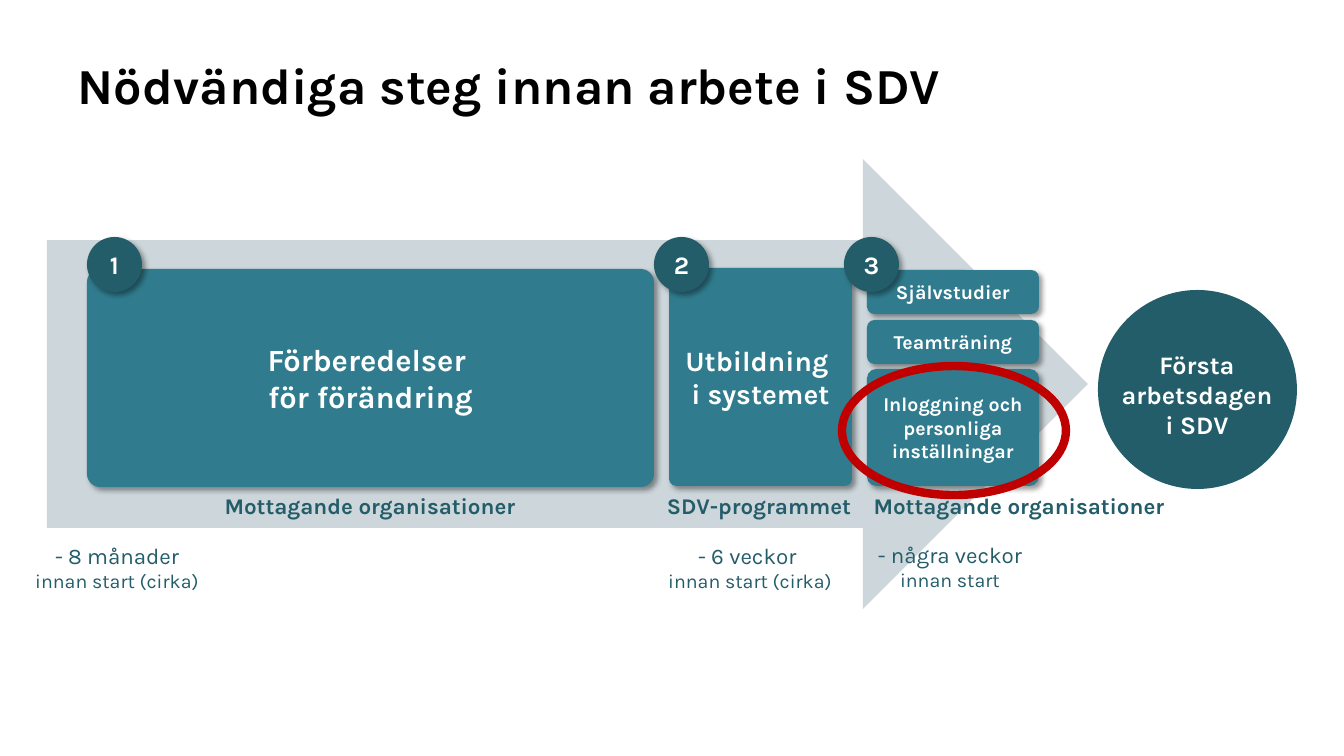
from dataclasses import dataclass

from lxml.etree import SubElement
from pptx import Presentation
from pptx.dml.color import RGBColor
from pptx.enum.shapes import MSO_SHAPE
from pptx.enum.text import MSO_ANCHOR, PP_ALIGN
from pptx.oxml.ns import qn
from pptx.util import Pt

EMU_PER_PX = 914400 / 100.8


def px(n):
    return round(n * EMU_PER_PX)


@dataclass(frozen=True)
class Theme:
    font: str = "Karla"
    black: str = "000000"
    white: str = "FFFFFF"
    dark: str = "245D6A"
    teal: str = "307C8E"
    pale: str = "CDD7DB"
    red: str = "C00000"
    title: int = 36
    phase: int = 22
    step: int = 20
    badge: int = 18
    label: int = 16
    small: int = 14


class Deck:
    def __init__(self, prs, theme):
        self.theme = theme
        self.slide = prs.slides.add_slide(prs.slide_layouts[6])

    def fill_text(self, sp, lines, color, bold=True, align=PP_ALIGN.CENTER,
                  anchor=MSO_ANCHOR.MIDDLE, spacing=None):
        tf = sp.text_frame
        for name, value in {"word_wrap": True, "vertical_anchor": anchor}.items():
            setattr(tf, name, value)
        for i, (text, size) in enumerate(lines):
            p = tf.add_paragraph() if i else tf.paragraphs[0]
            for name, value in {"alignment": align, "line_spacing": spacing}.items():
                setattr(p, name, value)
            r = p.add_run()
            r.text = text
            font = {"name": self.theme.font, "size": Pt(size), "bold": bold}
            for name, value in font.items():
                setattr(r.font, name, value)
            r.font.color.rgb = RGBColor.from_string(color)

    def text(self, box, lines, color, anchor=MSO_ANCHOR.TOP, **fmt):
        sp = self.slide.shapes.add_textbox(*map(px, box))
        self.fill_text(sp, lines, color, anchor=anchor, **fmt)

    def shape(self, kind, box, fill, adjust=()):
        sp = self.slide.shapes.add_shape(kind, *map(px, box))
        sp.shadow.inherit = False
        sp.fill.solid()
        sp.fill.fore_color.rgb = RGBColor.from_string(fill)
        sp.line.fill.background()
        for i, value in enumerate(adjust):
            sp.adjustments[i] = value
        return sp

    def raised(self, kind, box, fill, lines, adjust=()):
        sp = self.shape(kind, box, fill, adjust)
        effects = sp._element.spPr.find(qn("a:effectLst"))
        shadow = SubElement(effects, qn("a:outerShdw"), blurRad=str(Pt(4)),
                            dist=str(Pt(3)), dir="2700000", algn="tl", rotWithShape="0")
        color = SubElement(shadow, qn("a:srgbClr"), val=self.theme.black)
        SubElement(color, qn("a:alpha"), val="40000")
        self.fill_text(sp, lines, self.theme.white)

    def ring(self, box, color, width):
        sp = self.shape(MSO_SHAPE.OVAL, box, color)
        sp.fill.background()
        sp.line.color.rgb = RGBColor.from_string(color)
        sp.line.width = Pt(width)


def main():
    prs = Presentation()
    prs.slide_width, prs.slide_height = px(1344), px(756)
    t = Theme()
    s = Deck(prs, t)

    s.text((68, 39, 1210, 81), [("Nödvändiga steg innan arbete i SDV", t.title)], t.black,
           align=PP_ALIGN.LEFT, anchor=MSO_ANCHOR.BOTTOM, spacing=1.1)
    s.shape(MSO_SHAPE.RIGHT_ARROW, (47, 159, 1041, 450), t.pale, (0.64, 0.5))
    s.shape(MSO_SHAPE.OVAL, (1098, 290, 199, 199), t.dark)
    s.text((1105, 344, 184, 102), [("Första arbetsdagen i SDV", t.badge)], t.white)

    cards = [
        ((867, 270, 172, 44), 0.17, t.small, ["Självstudier"]),
        ((867, 320, 172, 44), 0.17, t.small, ["Teamträning"]),
        ((867, 369, 172, 117), 0.08, t.small, ["Inloggning och personliga inställningar"]),
        ((669, 268, 183, 218), 0.04, t.step, ["Utbildning ", "i systemet"]),
        ((87, 269, 567, 218), 0.06, t.phase, ["Förberedelser ", "för förändring"]),
    ]
    for box, radius, size, lines in cards:
        s.raised(MSO_SHAPE.ROUNDED_RECTANGLE, box, t.teal,
                 [(line, size) for line in lines], (radius,))

    for number, x in enumerate((87, 654, 844), 1):
        s.raised(MSO_SHAPE.OVAL, (x, 237, 55, 55), t.dark, [(str(number), t.badge)])

    owners = [(206, "Mottagande organisationer"), (595, "SDV-programmet"),
              (855, "Mottagande organisationer")]
    for x, owner in owners:
        s.text((x, 487, 328, 37), [(owner, t.label)], t.dark)

    times = [(25, 537, "- 8 månader", "innan start (cirka)"),
             (658, 537, "- 6 veckor ", "innan start (cirka)"),
             (858, 536, "- några veckor", "innan start")]
    for x, y, lead, note in times:
        s.text((x, y, 184, 61), [(lead, t.label), (note, t.small)], t.dark, bold=False)

    s.ring((842, 366, 224, 129), t.red, 6)
    prs.save("out.pptx")


if __name__ == "__main__":
    main()
